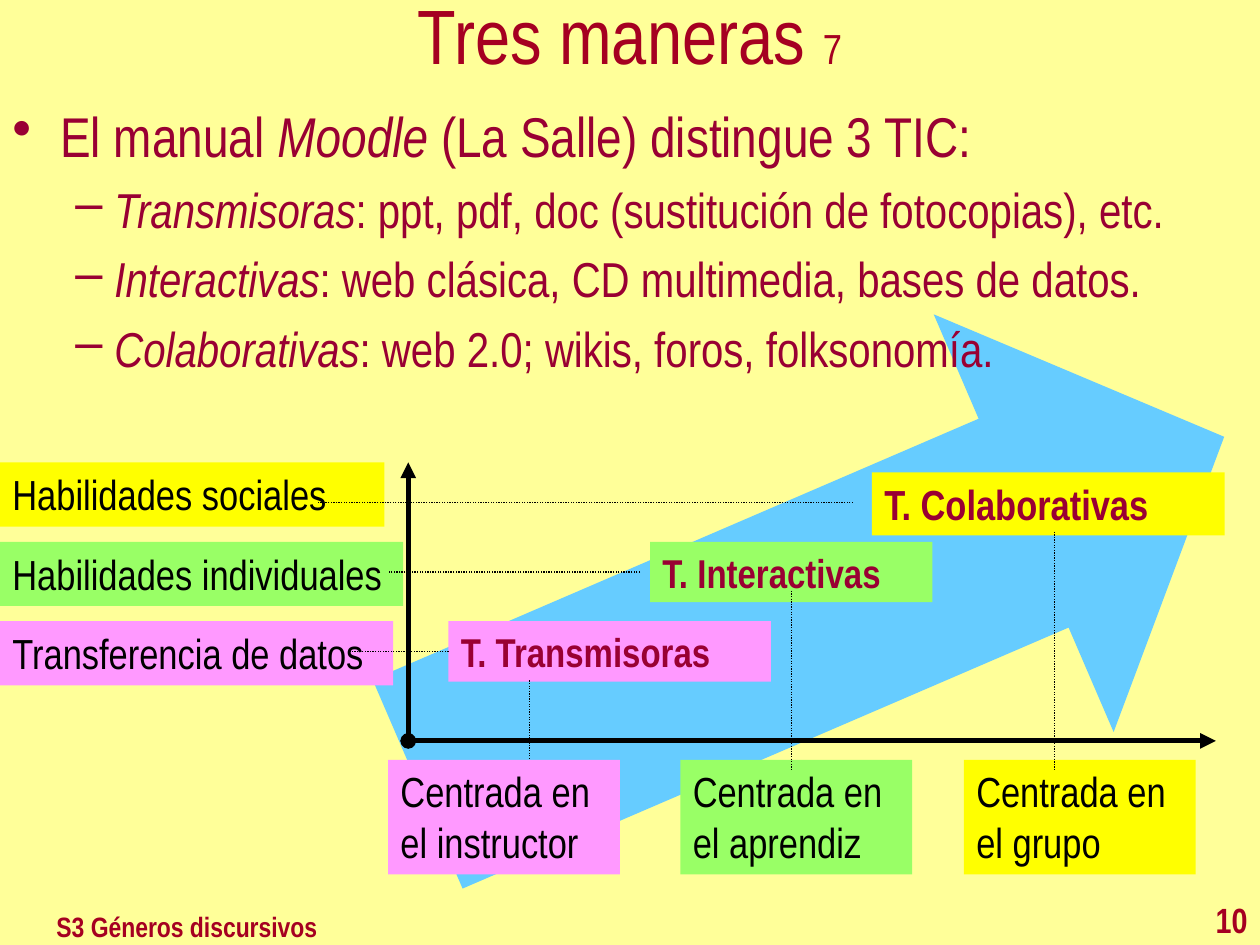
"""Build the slide on three kinds of educational technology."""
from lxml.etree import SubElement
from pptx import Presentation
from pptx.dml.color import RGBColor
from pptx.enum.dml import MSO_LINE
from pptx.enum.shapes import MSO_CONNECTOR, MSO_SHAPE
from pptx.enum.text import MSO_ANCHOR, PP_ALIGN
from pptx.oxml.ns import qn
from pptx.util import Inches, Pt

COLORS = {
    "back": "FFFF99", "arrow": "66CCFF", "title": "A50021", "body": "990033",
    "ink": "000000", "yellow": "FFFF00", "green": "99FF66", "pink": "FF99FF",
}


def style(run, size, color, bold=False, italic=False):
    """Format one run."""
    font = run.font
    font.name, font.size, font.bold, font.italic = "Arial Narrow", Pt(size), bold, italic
    font.color.rgb = RGBColor.from_string(COLORS[color])


def draw(start, end, width, head=None, tail=None):
    """Draw a black line, with arrowheads or dotted."""
    ends = [Inches(n) for n in (*start, *end)]
    line = slide.shapes.add_connector(MSO_CONNECTOR.STRAIGHT, *ends)
    SubElement(line._element.spPr, qn("a:effectLst"))
    line.line.width = Pt(width)
    line.line.color.rgb = RGBColor.from_string(COLORS["ink"])
    if not tail:
        line.line.dash_style = MSO_LINE.ROUND_DOT
    for tag, kind in (("a:headEnd", head), ("a:tailEnd", tail)):
        if kind:
            SubElement(line.line._get_or_add_ln(), qn(tag), type=kind)


deck = Presentation()
deck.slide_width, deck.slide_height = Inches(10), Inches(7.5)
slide = deck.slides.add_slide(deck.slide_layouts[6])
slide.background.fill.solid()
slide.background.fill.fore_color.rgb = RGBColor.from_string(COLORS["back"])

arrow = slide.shapes.add_shape(
    MSO_SHAPE.RIGHT_ARROW, Inches(3.03), Inches(3.04), Inches(6.97), Inches(3.61))
arrow.rotation = 336.7
arrow.adjustments[0], arrow.adjustments[1] = 0.5, 0.48
arrow.shadow.inherit = False
arrow.fill.solid()
arrow.fill.fore_color.rgb = RGBColor.from_string(COLORS["arrow"])
arrow.line.fill.background()

title = slide.shapes.add_textbox(0, 0, Inches(10), Inches(0.67))
title.text_frame.word_wrap = True
title.text_frame.vertical_anchor = MSO_ANCHOR.MIDDLE
para = title.text_frame.paragraphs[0]
para.alignment, para.line_spacing = PP_ALIGN.CENTER, 0.8
for text, size in (("Tres maneras ", 44), ("7", 24)):
    run = para.add_run()
    run.text = text
    style(run, size, "title")

points = [
    (0, ("El manual ", "Moodle", " (La Salle) distingue 3 TIC:")),
    (1, ("", "Transmisoras", ": ppt, pdf, doc (sustitución de fotocopias), etc.")),
    (1, ("", "Interactivas", ": web clásica, CD multimedia, bases de datos.")),
    (1, ("", "Colaborativas", ": web 2.0; wikis, foros, folksonomía.")),
]
levels = [(32, 0.38, 0.38, "•"), (28, 0.81, 0.31, "–")]
body = slide.shapes.add_textbox(0, Inches(0.76), Inches(10), Inches(2.36)).text_frame
body.word_wrap = True
for row, (level, parts) in enumerate(points):
    size, left, hang, mark = levels[level]
    para = body.add_paragraph() if row else body.paragraphs[0]
    para.level = level
    if row:
        para.space_before = Pt(6)
    props = para._p.get_or_add_pPr()
    props.set("marL", str(Inches(left)))
    props.set("indent", str(-Inches(hang)))
    SubElement(props, qn("a:buChar"), char=mark)
    for spot, text in enumerate(parts):
        if text:
            run = para.add_run()
            run.text = text
            style(run, size, "body", italic=spot == 1)

labels = [
    ("T. Colaborativas", 6.92, 3.75, 2.8, 0.5, "yellow", 24, "body"),
    ("T. Interactivas", 5.16, 4.3, 2.24, 0.48, "green", 23, "body"),
    ("T. Transmisoras", 3.56, 4.93, 2.56, 0.48, "pink", 23, "body"),
    ("Centrada en el instructor", 3.08, 6.03, 1.84, 0.91, "pink", 24, "ink"),
    ("Centrada en el aprendiz", 5.4, 6.03, 1.84, 0.91, "green", 24, "ink"),
    ("Centrada en el grupo", 7.65, 6.03, 1.84, 0.91, "yellow", 24, "ink"),
    ("Habilidades sociales", 0, 3.67, 3.05, 0.51, "yellow", 24, "ink"),
    ("Habilidades individuales", 0, 4.3, 3.2, 0.51, "green", 24, "ink"),
    ("Transferencia de datos", 0, 4.93, 3.12, 0.51, "pink", 24, "ink"),
]
origin = (3.24, 5.88)
draw(origin, (9.65, 5.88), 3, "oval", "triangle")
draw(origin, (3.24, 3.67), 3, "diamond", "triangle")
for text, left, top, width, height, fill, size, color in labels:
    box = slide.shapes.add_shape(
        MSO_SHAPE.RECTANGLE, Inches(left), Inches(top), Inches(width), Inches(height))
    box.shadow.inherit = False
    box.fill.solid()
    box.fill.fore_color.rgb = RGBColor.from_string(COLORS[fill])
    box.line.fill.background()
    frame = box.text_frame
    frame.text = text
    frame.word_wrap = True
    frame.vertical_anchor = MSO_ANCHOR.TOP
    frame.paragraphs[0].alignment = PP_ALIGN.LEFT
    style(frame.paragraphs[0].runs[0], size, color, bold=color == "body")

for x, top, end in ((4.2, 5.4, 6.03), (6.28, 4.69, 6.11), (8.37, 4.22, 6.11)):
    draw((x, top), (x, end), 0.75)
for y, right, end in ((3.99, 6.77, 2.52), (4.54, 5.08, 3.08), (5.17, 3.56, 2.76)):
    draw((right, y), (end, y), 0.75)

notes = [
    ("10", 9.25, 7.08, 0.75, 0.42, 20, PP_ALIGN.RIGHT),
    ("S3 Géneros discursivos", 0.35, 7.17, 6.06, 0.33, 16, PP_ALIGN.LEFT),
]
for text, left, top, width, height, size, align in notes:
    box = slide.shapes.add_textbox(Inches(left), Inches(top), Inches(width), Inches(height))
    frame = box.text_frame
    frame.text = text
    frame.word_wrap = True
    frame.paragraphs[0].alignment = align
    style(frame.paragraphs[0].runs[0], size, "title", bold=True)

deck.save("out.pptx")
